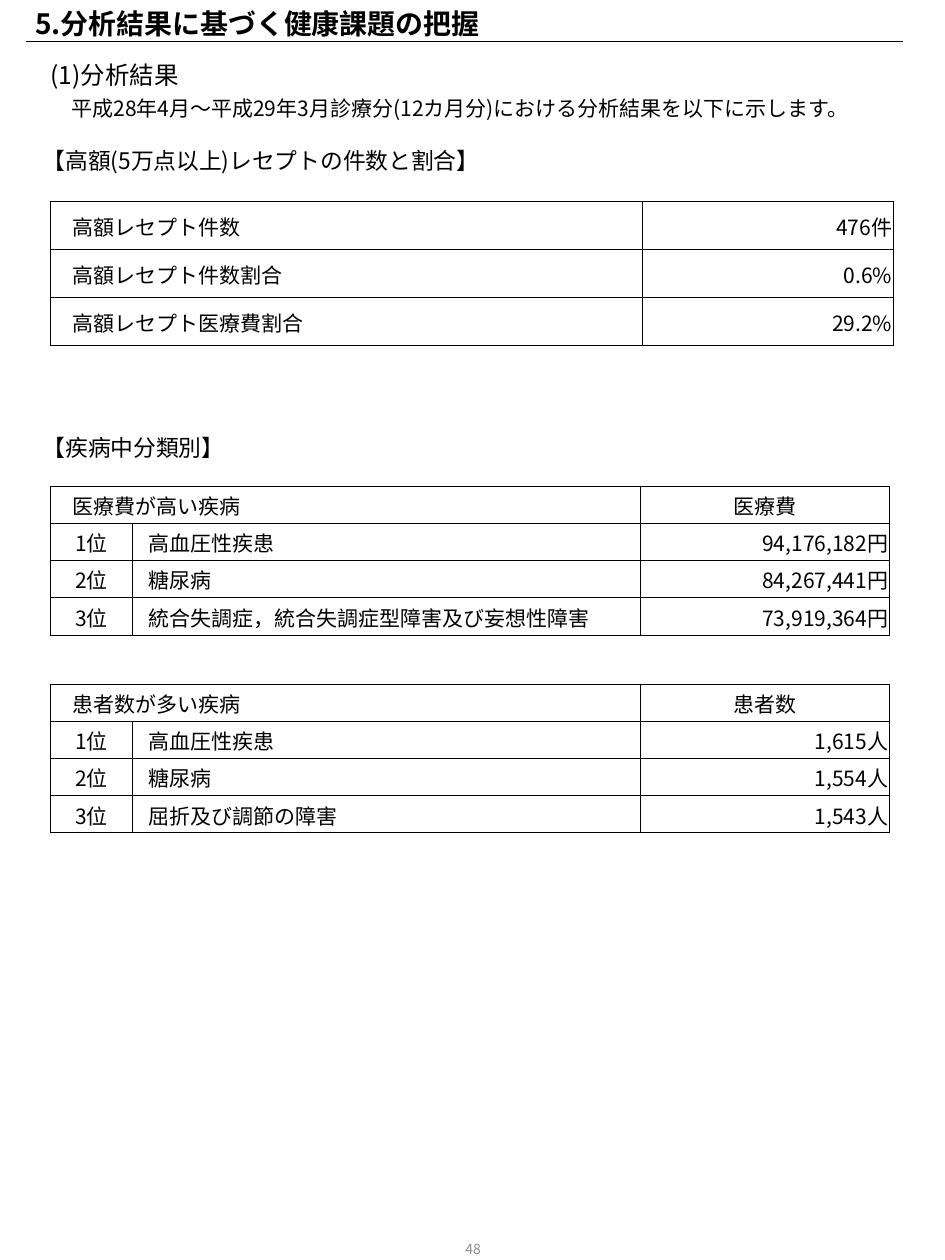
from lxml.etree import SubElement
from pptx import Presentation
from pptx.dml.color import RGBColor
from pptx.enum.shapes import MSO_CONNECTOR as Connector
from pptx.enum.text import MSO_ANCHOR as Anchor, PP_ALIGN as Align
from pptx.oxml.ns import qn
from pptx.util import Pt

FONT = "Noto Sans CJK JP"
BLACK = "000000"
BORDER_WIDTH = 0.5
RANK_COLUMNS = [46.8, 8.6, 281.5, 142.6]
RANK_ROW_HEIGHT = 21.24


def color(value):
    """Turn a hex string into a colour."""
    return RGBColor.from_string(value)


def style_para(para, size, align=Align.LEFT, ink=BLACK, bold=False):
    """Format a paragraph and all its runs."""
    para.alignment = align
    for span in para.runs:
        span.font.size = Pt(size)
        span.font.bold = bold
        span.font.name = FONT
        span.font.color.rgb = color(ink)
        SubElement(span.font._element, qn("a:ea"), typeface=FONT)


def add_text(page, left, top, width, height, lines, anchor=Anchor.TOP,
             spacing=None, **style):
    """Add a text box from (text, size) lines and return it."""
    box = page.shapes.add_textbox(Pt(left), Pt(top), Pt(width), Pt(height))
    frame = box.text_frame
    frame.word_wrap = True
    frame.vertical_anchor = anchor
    frame.margin_left = frame.margin_right = 0
    frame.text = "\n".join(text for text, size in lines)
    for para, (text, size) in zip(frame.paragraphs, lines):
        para.line_spacing = spacing
        style_para(para, size, **style)
    return box


def add_heading(page, top, text):
    """Add a bracketed table heading with a hanging indent."""
    box = add_text(page, 24.5, top, 481.7, 22.3, [(text, 13)], spacing=Pt(16))
    properties = box.text_frame.paragraphs[0]._p.get_or_add_pPr()
    properties.set("marL", str(Pt(7.2)))
    properties.set("indent", str(Pt(-7.2)))


def add_rule(page, left, right, top):
    """Add the thin line under the title."""
    rule = page.shapes.add_connector(
        Connector.STRAIGHT, Pt(left), Pt(top), Pt(right), Pt(top))
    rule.line.color.rgb = color(BLACK)
    rule.line.width = Pt(0.75)
    SubElement(rule._element.spPr, qn("a:effectLst"))


def set_borders(cell, hidden=""):
    """Draw the cell borders, leaving out the hidden sides."""
    properties = cell._tc.get_or_add_tcPr()
    for side in "LRTB":
        line = SubElement(properties, qn(f"a:ln{side}"), w=str(Pt(BORDER_WIDTH)))
        if side in hidden:
            SubElement(line, qn("a:noFill"))
        else:
            fill = SubElement(line, qn("a:solidFill"))
            SubElement(fill, qn("a:srgbClr"), val=BLACK)


def fill_cell(cell, text, align, hidden=""):
    """Write one table cell with its borders and margins."""
    set_borders(cell, hidden)
    cell.fill.background()
    cell.vertical_anchor = Anchor.MIDDLE
    cell.margin_left = cell.margin_right = cell.margin_top = Pt(0.72)
    cell.margin_bottom = 0
    para = cell.text_frame.paragraphs[0]
    para.text = text
    style_para(para, 12, align)
    if not text:
        SubElement(para._p, qn("a:endParaRPr"), sz="1200")


def add_grid(page, top, columns, row_height, rows, aligns, hidden):
    """Add a bordered table and return it."""
    frame = page.shapes.add_table(
        len(rows), len(columns), Pt(28.8), Pt(top),
        Pt(sum(columns)), Pt(row_height * len(rows)))
    table = frame.table
    table.first_row = table.horz_banding = False
    for column, width in zip(table.columns, columns):
        column.width = Pt(width)
    for row, texts in zip(table.rows, rows):
        row.height = Pt(row_height)
        for cell, text, align, sides in zip(row.cells, texts, aligns, hidden):
            fill_cell(cell, text, align, sides)
    return table


def add_ranking(page, top, title, measure, entries):
    """Add a top-three table under a merged header."""
    rows = [[title, "", "", measure]]
    for rank, (disease, value) in enumerate(entries, 1):
        rows.append([f"{rank}位", "", disease, value])
    aligns = [Align.CENTER, Align.LEFT, Align.LEFT, Align.RIGHT]
    table = add_grid(page, top, RANK_COLUMNS, RANK_ROW_HEIGHT, rows, aligns,
                     ["", "R", "L", ""])
    table.cell(0, 0).merge(table.cell(0, 2))
    table.cell(0, 0).text_frame.paragraphs[0].alignment = Align.LEFT
    table.cell(0, 3).text_frame.paragraphs[0].alignment = Align.CENTER


def main():
    """Build the page and save it."""
    deck = Presentation()
    deck.slide_width, deck.slide_height = Pt(540), Pt(720)
    page = deck.slides.add_slide(deck.slide_layouts[6])

    add_text(page, 20.2, 0, 481.7, 26.6, [("5.分析結果に基づく健康課題の把握", 16)],
             anchor=Anchor.MIDDLE, bold=True)
    add_rule(page, 15.1, 516.2, 23.8)
    add_text(page, 28.8, 26.6, 481.7, 64.8, [
        ("(1)分析結果", 14),
        ("　平成28年4月～平成29年3月診療分(12カ月分)における分析結果を以下に示します。", 12),
    ], spacing=1.25)

    add_heading(page, 79.9, "【高額(5万点以上)レセプトの件数と割合】")
    add_grid(page, 115.2, [338.4, 143.3], 27.36, [
        ["　高額レセプト件数", "476件"],
        ["　高額レセプト件数割合", "0.6%"],
        ["　高額レセプト医療費割合", "29.2%"],
    ], [Align.LEFT, Align.RIGHT], ["", ""])

    add_heading(page, 244.1, "【疾病中分類別】")
    add_ranking(page, 277.9, "　医療費が高い疾病", "医療費", [
        ("高血圧性疾患", "94,176,182円"),
        ("糖尿病", "84,267,441円"),
        ("統合失調症，統合失調症型障害及び妄想性障害", "73,919,364円"),
    ])
    add_ranking(page, 391, "　患者数が多い疾病", "患者数", [
        ("高血圧性疾患", "1,615人"),
        ("糖尿病", "1,554人"),
        ("屈折及び調節の障害", "1,543人"),
    ])

    add_text(page, 207.4, 694.8, 126, 38.2, [("48", 8)], anchor=Anchor.MIDDLE,
             align=Align.CENTER, ink="8C8C8C")
    deck.save("out.pptx")


if __name__ == "__main__":
    main()
